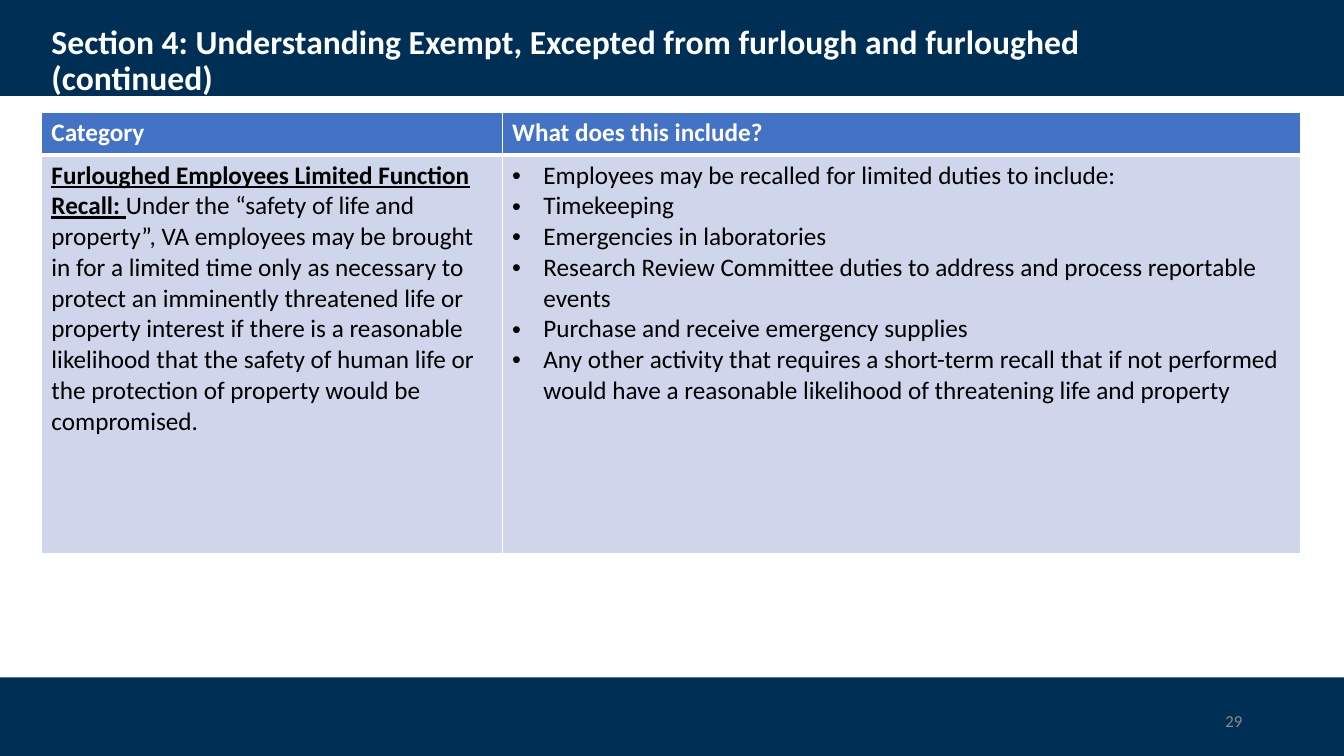
from lxml.etree import SubElement
from pptx import Presentation
from pptx.dml.color import RGBColor
from pptx.enum.shapes import MSO_SHAPE
from pptx.enum.text import MSO_ANCHOR, MSO_AUTO_SIZE, PP_ALIGN
from pptx.oxml import parse_xml
from pptx.oxml.ns import nsdecls, qn
from pptx.util import Inches, Pt

NAVY, BLUE, PALE = "002F56", "4472C4", "CFD5EA"
WHITE, BLACK, GREY = "FFFFFF", "000000", "8C8C8C"

HEADS = ["Category", "What does this include?"]
RECALL = [
    ("Furloughed Employees Limited Function Recall:", True, True),
    (" ", False, True),
    ("Under the “safety of life and property”, VA employees may be brought in "
     "for a limited time only as necessary to protect an imminently threatened "
     "life or property interest if there is a reasonable likelihood that the "
     "safety of human life or the protection of property would be compromised.",
     False, False),
]
DUTIES = [
    "Employees may be recalled for limited duties to include:",
    "Timekeeping",
    "Emergencies in laboratories",
    "Research Review Committee duties to address and process reportable events",
    "Purchase and receive emergency supplies",
    "Any other activity that requires a short-term recall that if not performed "
    "would have a reasonable likelihood of threatening life and property",
]


def color(code):
    return RGBColor.from_string(code)


class Deck:
    """Holds the style and the current slide; lengths are percent of the slide."""

    face = "Calibri"

    def __init__(self):
        self.prs = Presentation()
        self.prs.slide_width = Inches(13.33)
        self.prs.slide_height = Inches(7.5)
        self.slide = self.prs.slides.add_slide(self.prs.slide_layouts[5])

    def wide(self, share):
        return int(self.prs.slide_width * share / 100)

    def high(self, share):
        return int(self.prs.slide_height * share / 100)

    def box(self, x, y, w, h):
        return self.wide(x), self.high(y), self.wide(w), self.high(h)

    def style(self, para, size, ink, bold=None):
        font = para.font
        font.name, font.size, font.bold = self.face, Pt(size), bold
        font.color.rgb = color(ink)

    def bar(self, y, h):
        """Draw a full-width band behind everything else."""
        bar = self.slide.shapes.add_shape(MSO_SHAPE.RECTANGLE, *self.box(0, y, 100, h))
        bar.shadow.inherit = False
        bar.fill.solid()
        bar.fill.fore_color.rgb = color(NAVY)
        bar.line.fill.background()
        self.slide.shapes.element.insert(2, bar.element)

    def title(self, text, *area):
        title = self.slide.shapes.title
        title.left, title.top, title.width, title.height = self.box(*area)
        frame = title.text_frame
        frame.text = text
        frame.word_wrap = True
        frame.auto_size = MSO_AUTO_SIZE.NONE
        frame.vertical_anchor = MSO_ANCHOR.MIDDLE
        para = frame.paragraphs[0]
        para.alignment = PP_ALIGN.LEFT
        para.line_spacing = 0.9
        self.style(para, 24, WHITE, True)

    def number(self, text, *area):
        frame = self.slide.shapes.add_textbox(*self.box(*area)).text_frame
        frame.word_wrap = True
        frame.vertical_anchor = MSO_ANCHOR.MIDDLE
        para = frame.paragraphs[0]
        para.text = text
        para.alignment = PP_ALIGN.RIGHT
        self.style(para, 12, GREY)

    def table(self, x, y, cols, rows):
        shape = self.slide.shapes.add_table(
            len(rows), len(cols), *self.box(x, y, sum(cols), sum(rows)))
        table = shape.table
        for col, share in zip(table.columns, cols):
            col.width = self.wide(share)
        for row, share in zip(table.rows, rows):
            row.height = self.high(share)
        return table

    def paint(self, cell, fill, top, base):
        """Fill a cell and give it white borders; top and base are in points."""
        cell.fill.solid()
        cell.fill.fore_color.rgb = color(fill)
        props = cell._tc.get_or_add_tcPr()
        for i, (side, width) in enumerate(zip("LRTB", (1, 1, top, base))):
            props.insert(i, parse_xml(
                f'<a:ln{side} {nsdecls("a")} w="{Pt(width)}"><a:solidFill>'
                f'<a:srgbClr val="{WHITE}"/></a:solidFill></a:ln{side}>'))

    def head(self, cell, text):
        cell.text = text
        self.style(cell.text_frame.paragraphs[0], 18, WHITE, True)

    def mixed(self, cell, parts):
        para = cell.text_frame.paragraphs[0]
        self.style(para, 18, BLACK)
        for text, bold, under in parts:
            run = para.add_run()
            run.text = text
            run.font.bold, run.font.underline = bold, under

    def bullets(self, cell, items):
        cell.text = "\n".join(items)
        for para in cell.text_frame.paragraphs:
            props = para._p.get_or_add_pPr()
            props.set("marL", str(Inches(0.31)))
            props.set("indent", str(-Inches(0.31)))
            SubElement(props, qn("a:buFont"), typeface="Arial")
            SubElement(props, qn("a:buChar"), char="•")
            self.style(para, 18, BLACK, False)


def main():
    deck = Deck()
    deck.bar(0, 12.7)
    deck.bar(89.6, 10.4)
    deck.title("Section 4: Understanding Exempt, Excepted from furlough and "
               "furloughed (continued)", 3.08, 3.6, 86.27, 9.07)
    table = deck.table(3.08, 14.93, [34.28, 59.42], [5.6, 52.67])
    for col, text in enumerate(HEADS):
        deck.head(table.cell(0, col), text)
        deck.paint(table.cell(0, col), BLUE, 1, 3)
        deck.paint(table.cell(1, col), PALE, 3, 1)
    deck.mixed(table.cell(1, 0), RECALL)
    deck.bullets(table.cell(1, 1), DUTIES)
    deck.number("29", 70.67, 92.67, 22.5, 5.33)
    deck.prs.save("out.pptx")


if __name__ == "__main__":
    main()
